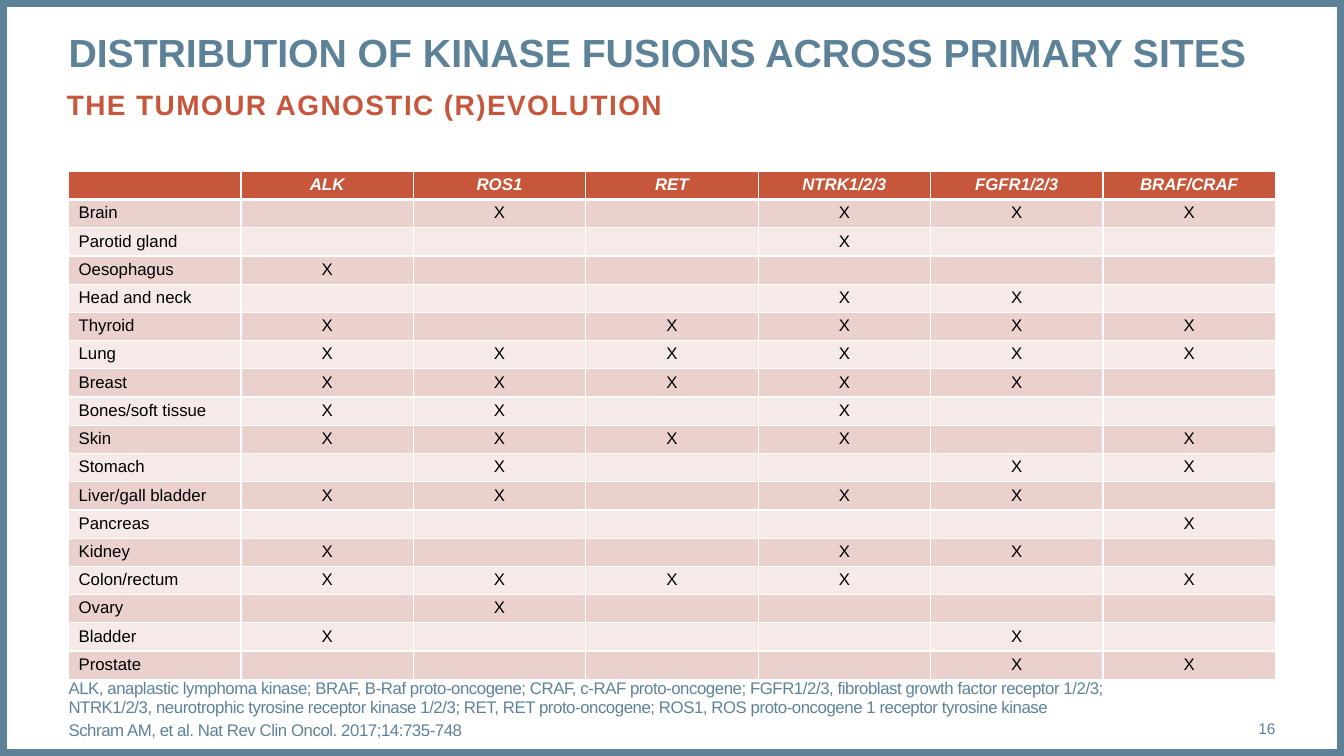
from dataclasses import dataclass

from lxml import etree
from pptx import Presentation
from pptx.dml.color import RGBColor
from pptx.enum.shapes import MSO_SHAPE
from pptx.enum.text import MSO_ANCHOR, PP_ALIGN
from pptx.oxml.ns import qn
from pptx.util import Inches, Pt

RECTANGLE = MSO_SHAPE.RECTANGLE
TOP, MIDDLE, BOTTOM = MSO_ANCHOR.TOP, MSO_ANCHOR.MIDDLE, MSO_ANCHOR.BOTTOM
LEFT, CENTER, RIGHT = PP_ALIGN.LEFT, PP_ALIGN.CENTER, PP_ALIGN.RIGHT


@dataclass(frozen=True)
class Theme:
    font: str = "Arial"
    # Colours
    blue: str = "5D8298"
    red: str = "C7573C"
    header: str = "C6573B"
    bands: tuple = ("EAD1CE", "F5EAE8")
    white: str = "FFFFFF"
    black: str = "000000"
    # Type sizes and line widths, in points
    title: int = 28
    subtitle: int = 20
    body: int = 12
    number: int = 11
    frame_line: int = 10
    cell_line: int = 1
    header_line: int = 3


# Places on the grid: column, row, columns wide, rows high
TITLE_BOX = (0, 1, 7, 3.38)
SUBTITLE_BOX = (-0.01, 3.13, 7, 2.77)
TABLE_CORNER = (0, 6.12)
FOOTNOTE_BOX = (0, 25.02, 6.5, 1.44)
NUMBER_BOX = (6.5, 25.31, 0.5, 1.44)

GENES = ["ALK", "ROS1", "RET", "NTRK1/2/3", "FGFR1/2/3", "BRAF/CRAF"]

# One mark per gene, in the order of GENES
SITES = {
    "Brain": "-X-XXX",
    "Parotid gland": "---X--",
    "Oesophagus": "X-----",
    "Head and neck": "---XX-",
    "Thyroid": "X-XXXX",
    "Lung": "XXXXXX",
    "Breast": "XXXXX-",
    "Bones/soft tissue": "XX-X--",
    "Skin": "XXXX-X",
    "Stomach": "-X--XX",
    "Liver/gall bladder": "XX-XX-",
    "Pancreas": "-----X",
    "Kidney": "X--XX-",
    "Colon/rectum": "XXXX-X",
    "Ovary": "-X----",
    "Bladder": "X---X-",
    "Prostate": "----XX",
}

FOOTNOTES = [
    "ALK, anaplastic lymphoma kinase; BRAF, B-Raf proto-oncogene; CRAF, c-RAF proto-oncogene; "
    "FGFR1/2/3, fibroblast growth factor receptor 1/2/3; NTRK1/2/3, neurotrophic tyrosine receptor "
    "kinase 1/2/3; RET, RET proto-oncogene; ROS1, ROS proto-oncogene 1 receptor tyrosine kinase",
    "Schram AM, et al. Nat Rev Clin Oncol. 2017;14:735-748",
]


class SlideBuilder:
    """Draws on a grid whose cells are the cells of the table."""

    margin = Inches(0.68)
    col = Inches(1.71)
    row = Inches(5) // 18

    def __init__(self, prs, theme):
        self.prs, self.theme = prs, theme
        self.s = prs.slides.add_slide(prs.slide_layouts[6])

    def place(self, col, row, cols, rows):
        return (int(self.margin + col * self.col), int(row * self.row),
                int(cols * self.col), int(rows * self.row))

    def style(self, p, size, color, align=LEFT, bold=False, italic=False, spacing=0):
        p.alignment = align
        f = p.font
        f.name, f.size, f.bold, f.italic = self.theme.font, Pt(size), bold, italic
        f.color.rgb = RGBColor.from_string(color)
        if spacing:
            for r in p.runs:
                r._r.get_or_add_rPr().set("spc", str(round(spacing * 100)))

    def frame(self):
        sp = self.s.shapes.add_shape(RECTANGLE, 0, 0, self.prs.slide_width, self.prs.slide_height)
        sp.shadow.inherit = False
        sp.fill.background()
        sp.line.color.rgb = RGBColor.from_string(self.theme.blue)
        sp.line.width = Pt(self.theme.frame_line)

    def text(self, box, lines, size, color, anchor=TOP, line_spacing=None, gap=0, **style):
        tf = self.s.shapes.add_textbox(*self.place(*box)).text_frame
        tf.word_wrap = True
        tf.vertical_anchor = anchor
        tf.margin_left = tf.margin_top = tf.margin_right = tf.margin_bottom = 0
        for i, line in enumerate(lines):
            p = tf.add_paragraph() if i else tf.paragraphs[0]
            p.text = line
            p.line_spacing = line_spacing
            if i and gap:
                p.space_before = Pt(gap)
            self.style(p, size, color, **style)

    def borders(self, cell, top, bottom):
        side = self.theme.cell_line
        tcPr = cell._tc.get_or_add_tcPr()
        for name, width in (("L", side), ("R", side), ("T", top), ("B", bottom)):
            ln = etree.SubElement(tcPr, qn(f"a:ln{name}"), w=str(Pt(width)))
            fill = etree.SubElement(ln, qn("a:solidFill"))
            etree.SubElement(fill, qn("a:srgbClr"), val=self.theme.white)

    def cell(self, cell, text, fill, color, **style):
        cell.margin_left = cell.margin_right = Inches(0.1)
        cell.margin_top = cell.margin_bottom = Inches(0.04)
        cell.fill.solid()
        cell.fill.fore_color.rgb = RGBColor.from_string(fill)
        p = cell.text_frame.paragraphs[0]
        if text:
            p.text = text
        else:  # an empty cell must not grow taller than the others
            etree.SubElement(p._p, qn("a:endParaRPr"), sz=str(self.theme.body * 100))
        self.style(p, self.theme.body, color, **style)

    def table(self, corner, header, rows):
        t = self.theme
        n_rows, n_cols = len(rows) + 1, len(header)
        box = self.place(*corner, n_cols, n_rows)
        tbl = self.s.shapes.add_table(n_rows, n_cols, *box).table
        tbl.first_row = tbl.horz_banding = False
        for column in tbl.columns:
            column.width = self.col
        for line in tbl.rows:
            line.height = self.row

        # The rule under the header is shared by rows 0 and 1
        rules = [t.cell_line, t.header_line] + [t.cell_line] * (n_rows - 1)
        for r, values in enumerate([header, *rows]):
            is_header = r == 0
            fill = t.header if is_header else t.bands[(r - 1) % 2]
            color = t.white if is_header else t.black
            for c, text in enumerate(values):
                cell = tbl.cell(r, c)
                self.borders(cell, top=rules[r], bottom=rules[r + 1])
                self.cell(cell, text, fill, color, align=CENTER if c else LEFT,
                          bold=is_header, italic=is_header)


def main():
    prs = Presentation()
    prs.slide_width, prs.slide_height = Inches(13.33), Inches(7.5)
    t = Theme()
    b = SlideBuilder(prs, t)

    # Frame and headings
    b.frame()
    b.text(SUBTITLE_BOX, ["THE TUMOUR AGNOSTIC (R)EVOLUTION"],
           t.subtitle, t.red, bold=True, spacing=1)
    b.text(TITLE_BOX, ["DISTRIBUTION OF KINASE FUSIONS ACROSS PRIMARY SITES"],
           t.title, t.blue, bold=True)

    # Fusions by primary site
    rows = [[site, *(mark.strip("-") for mark in marks)] for site, marks in SITES.items()]
    b.table(TABLE_CORNER, ["", *GENES], rows)

    # Footnotes and slide number
    b.text(FOOTNOTE_BOX, FOOTNOTES, t.body, t.blue,
           anchor=BOTTOM, line_spacing=0.95, gap=3, spacing=-0.3)
    b.text(NUMBER_BOX, ["16"], t.number, t.blue, anchor=MIDDLE, align=RIGHT)

    prs.save("out.pptx")


if __name__ == "__main__":
    main()
